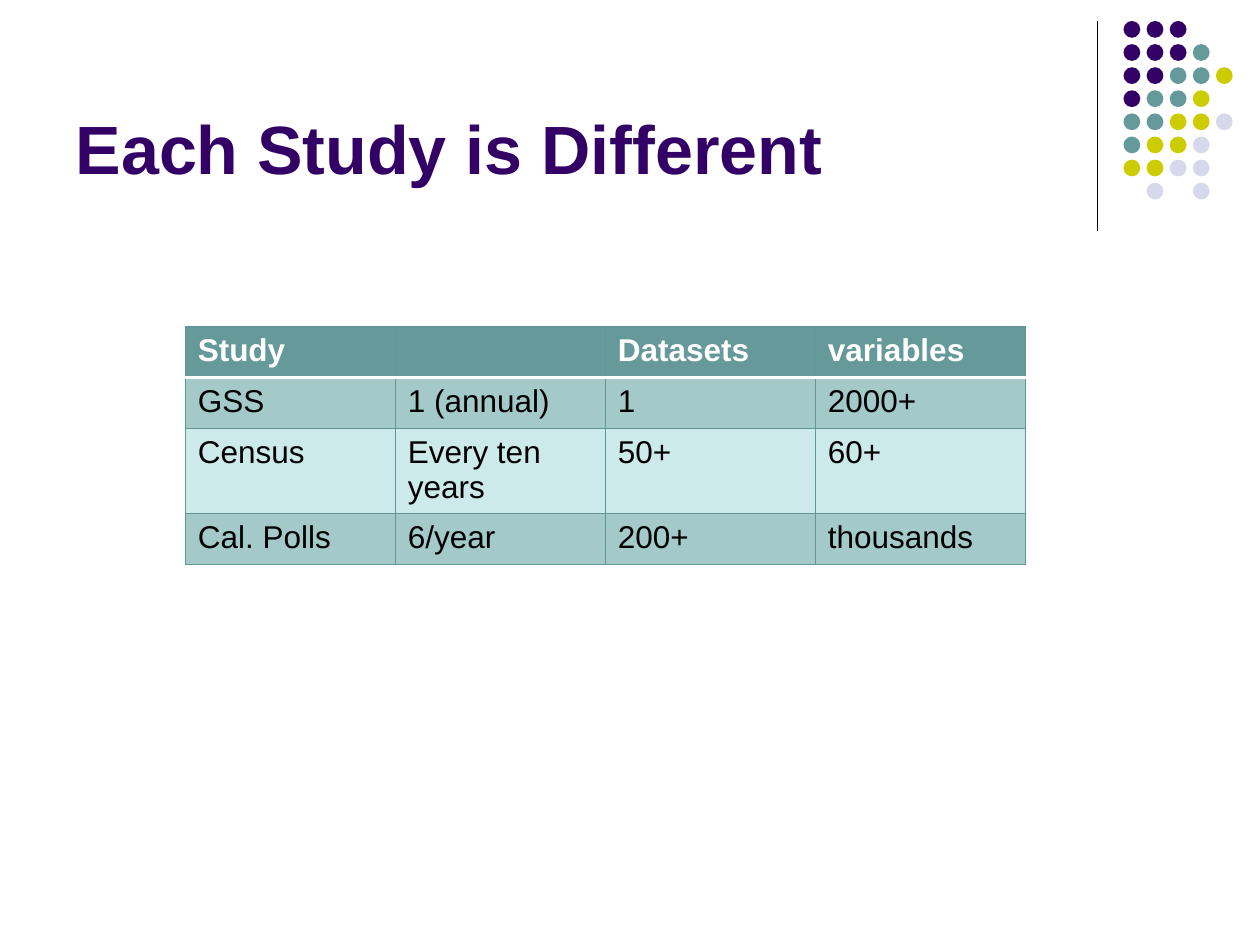
import lxml.etree
import pptx
import pptx.dml.color
import pptx.enum.shapes
import pptx.enum.text
import pptx.oxml.ns
import pptx.util

COLORS = {
    "purple": "330066", "teal": "669999", "lime": "CCCC00", "lavender": "D8D8EC",
    "black": "000000", "white": "FFFFFF", "border": "639797",
    "band": "A3C9C9", "plain": "CCEAEA",
}
FONT = "Arial"

# The slide is a grid of 120 columns by 90 rows; boxes are (left, top, width, height)
SLIDE_COLUMNS, SLIDE_ROWS = 120, 90
UNIT = pptx.util.Inches(10) / SLIDE_COLUMNS
TITLE_BOX = (6, 1.5, 99, 17)
DECORATION_BOX = (104.5, 2, 13, 20)
TABLE_BOX = (17.64, 31.1, 80, 22.65)

# One letter per dot, one string per row
DOT_ROWS = ["PPP", "PPPT", "PPTTL", "PTTL", "TTLLV", "TLLV", "LLVV", " V V"]
DOT_COLORS = {"P": "purple", "T": "teal", "L": "lime", "V": "lavender"}
DOT_SIZE, DOT_PITCH, DOT_INDENT = 1.6, 2.2, 2.5

STUDIES = [
    ["Study", "", "Datasets", "variables"],
    ["GSS", "1 (annual)", "1", "2000+"],
    ["Census", "Every ten years", "50+", "60+"],
    ["Cal. Polls", "6/year", "200+", "thousands"],
]
ROW_HEIGHTS = [4.87, 4.87, 8.04, 4.87]


def grid(*lengths):
    return [pptx.util.Emu(round(length * UNIT)) for length in lengths]


def rgb(name):
    return pptx.dml.color.RGBColor.from_string(COLORS[name])


def set_font(paragraph, size, color, bold):
    font = paragraph.font
    font.name, font.size, font.bold = FONT, pptx.util.Pt(size), bold
    font.color.rgb = rgb(color)


def add_title(slide, box, text):
    title = slide.shapes.title
    title.left, title.top, title.width, title.height = grid(*box)
    frame = title.text_frame
    frame.text = text
    frame.vertical_anchor = pptx.enum.text.MSO_ANCHOR.BOTTOM
    frame.paragraphs[0].alignment = pptx.enum.text.PP_ALIGN.LEFT
    set_font(frame.paragraphs[0], 39, "purple", True)


def add_decoration(slide, box):
    left, top, _, height = box
    # Vertical rule
    rule = slide.shapes.add_connector(
        pptx.enum.shapes.MSO_CONNECTOR.STRAIGHT, *grid(left, top, left, top + height))
    rule.line.color.rgb = rgb("black")
    rule.line.width = pptx.util.Pt(0.75)
    lxml.etree.SubElement(rule._element.spPr, pptx.oxml.ns.qn("a:effectLst"))
    # Dot pattern
    dots = slide.shapes.add_group_shape()
    for row, letters in enumerate(DOT_ROWS):
        for column, letter in enumerate(letters):
            if letter == " ":
                continue
            dot = dots.shapes.add_shape(
                pptx.enum.shapes.MSO_SHAPE.OVAL,
                *grid(left + DOT_INDENT + column * DOT_PITCH, top + row * DOT_PITCH,
                      DOT_SIZE, DOT_SIZE))
            dot.shadow.inherit = False
            dot.fill.solid()
            dot.fill.fore_color.rgb = rgb(DOT_COLORS[letter])
            dot.line.fill.background()


def set_border(cell, side, color, width):
    properties = cell._tc.get_or_add_tcPr()
    line = lxml.etree.SubElement(
        properties, pptx.oxml.ns.qn("a:" + side), w=str(pptx.util.Pt(width)))
    fill = lxml.etree.SubElement(line, pptx.oxml.ns.qn("a:solidFill"))
    lxml.etree.SubElement(fill, pptx.oxml.ns.qn("a:srgbClr"), val=COLORS[color])


def format_cell(cell, row):
    # Borders precede the fill in the cell's properties
    for side in ("lnL", "lnR", "lnT", "lnB"):
        under_header = (row, side) in ((0, "lnB"), (1, "lnT"))
        set_border(cell, side, *(("white", 2) if under_header else ("border", 0.75)))
    cell.fill.solid()
    cell.fill.fore_color.rgb = rgb("teal" if row == 0 else "band" if row % 2 else "plain")
    set_font(cell.text_frame.paragraphs[0], 18, "white" if row == 0 else "black", row == 0)


def add_study_table(slide, box):
    table = slide.shapes.add_table(len(STUDIES), len(STUDIES[0]), *grid(*box)).table
    for row, texts in enumerate(STUDIES):
        table.rows[row].height = grid(ROW_HEIGHTS[row])[0]
        for column, text in enumerate(texts):
            cell = table.cell(row, column)
            cell.text = text
            format_cell(cell, row)


def main():
    presentation = pptx.Presentation()
    presentation.slide_width, presentation.slide_height = grid(SLIDE_COLUMNS, SLIDE_ROWS)
    title_only = presentation.slide_layouts[5]
    slide = presentation.slides.add_slide(title_only)
    add_decoration(slide, DECORATION_BOX)
    add_title(slide, TITLE_BOX, "Each Study is Different")
    add_study_table(slide, TABLE_BOX)
    presentation.save("out.pptx")


if __name__ == "__main__":
    main()
